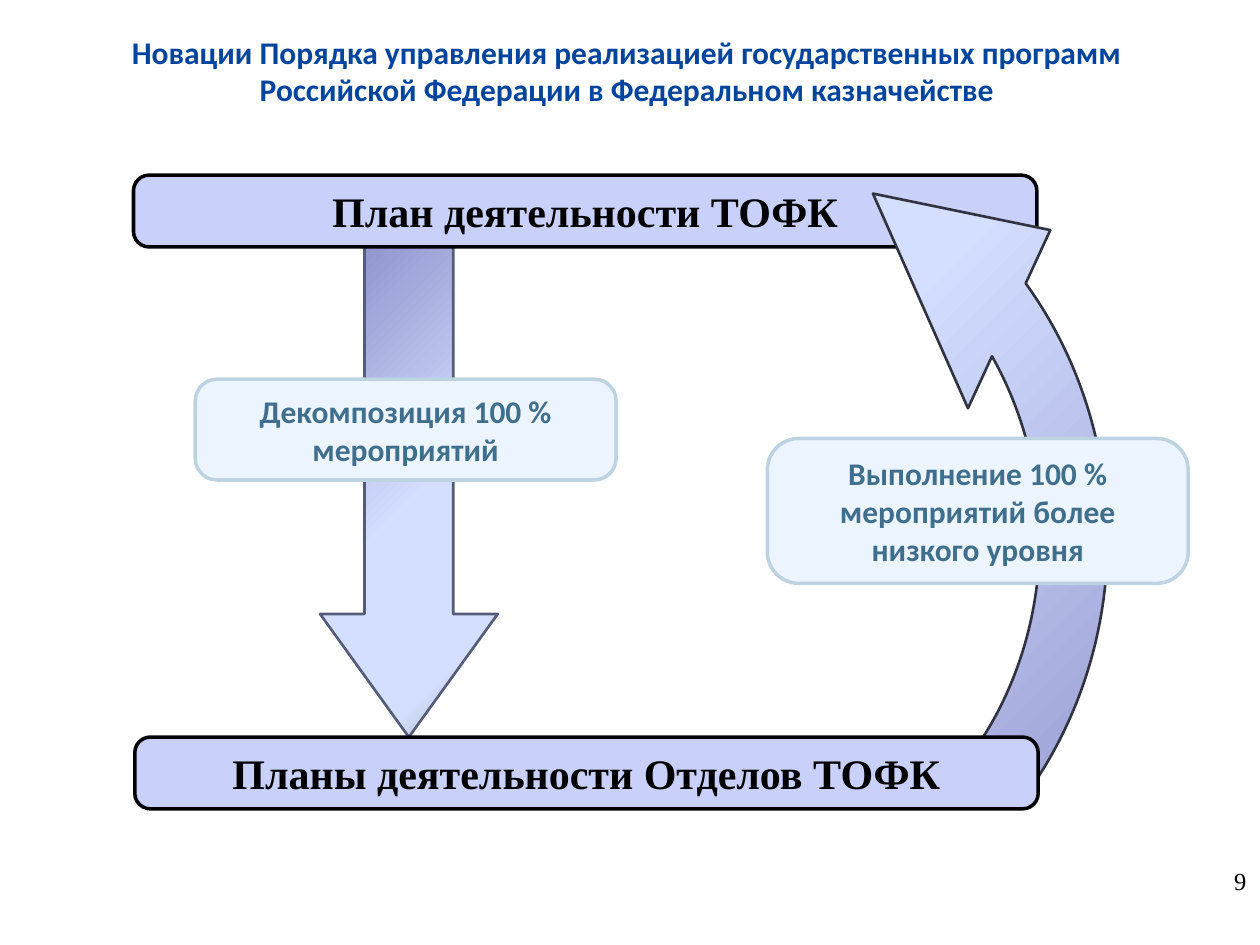
from dataclasses import dataclass

from lxml.etree import SubElement
from pptx import Presentation
from pptx.dml.color import RGBColor
from pptx.enum.shapes import MSO_SHAPE
from pptx.enum.text import MSO_ANCHOR, MSO_AUTO_SIZE, PP_ALIGN
from pptx.oxml.ns import qn
from pptx.util import Inches, Pt

COLUMNS, ROWS = 100, 75
SLIDE_WIDTH, SLIDE_HEIGHT = Inches(10), Inches(7.5)
PLAN_WIDTH, PLAN_HEIGHT = 71.7, 5.7
STEP_WIDTH = 33.4
CORNER = 0.217


@dataclass(frozen=True)
class Area:
    """Place on the slide in grid columns and rows."""
    column: float
    row: float
    columns: float
    rows: float

    def box(self) -> tuple[int, int, int, int]:
        """Return left, top, width and height in EMU."""
        return (int(self.column * SLIDE_WIDTH / COLUMNS), int(self.row * SLIDE_HEIGHT / ROWS),
                int(self.columns * SLIDE_WIDTH / COLUMNS), int(self.rows * SLIDE_HEIGHT / ROWS))


@dataclass(frozen=True)
class Lettering:
    """Typeface, size, colour and weight of a text."""
    font: str
    size: float
    color: str
    bold: bool = True


@dataclass(frozen=True)
class PanelStyle:
    """Fill, outline and lettering of a rounded panel."""
    fill: str
    outline: str
    lettering: Lettering


@dataclass(frozen=True)
class Panel:
    """Rounded panel with its text."""
    area: Area
    text: str
    style: PanelStyle


@dataclass(frozen=True)
class BlockArrow:
    """Gradient arrow between the two plans."""
    preset: MSO_SHAPE
    area: Area
    adjustments: tuple[float, ...]
    end_color: str
    outline: str
    rotation: float = 0
    mirrored: bool = False


PLAN = PanelStyle("C9D1FB", "000000", Lettering("Times New Roman", 24, "000000"))
STEP = PanelStyle("EBF4FF", "BED3E1", Lettering("Calibri", 18, "406F8D"))
TITLE = Lettering("Calibri", 18, "00449E")
PAGE_NUMBER = Lettering("Times New Roman", 14, "000000", False)

DECOMPOSITION_ARROW = BlockArrow(
    MSO_SHAPE.DOWN_ARROW, Area(25.4, 18.6, 14.1, 39.9), (0.5, 0.693), "96AB94", "545C79")
EXECUTION_ARROW = BlockArrow(
    MSO_SHAPE.CIRCULAR_ARROW, Area(18.2, 6.4, 76.8, 72.8),
    (0.074, 17.135, 183.983, 139.159, 0.107), "D9BDA9", "323341", 90, True)

TERRITORIAL_PLAN = Panel(
    Area(10.6, 13.9, PLAN_WIDTH, PLAN_HEIGHT), "План деятельности ТОФК", PLAN)
DEPARTMENT_PLANS = Panel(
    Area(10.7, 58.5, PLAN_WIDTH, PLAN_HEIGHT), "Планы деятельности Отделов ТОФК", PLAN)
DECOMPOSITION = Panel(
    Area(15.5, 30.1, STEP_WIDTH, 8), "Декомпозиция 100 % мероприятий", STEP)
EXECUTION = Panel(
    Area(60.9, 34.8, STEP_WIDTH, 11.5),
    "Выполнение 100 % мероприятий более низкого уровня", STEP)


def rgb(color: str) -> RGBColor:
    """Turn a hex string into a colour."""
    return RGBColor.from_string(color)


def write(shape, text: str, lettering: Lettering, alignment: PP_ALIGN, grow: bool = True) -> None:
    """Put one run of text into a shape."""
    frame = shape.text_frame
    frame.word_wrap = True
    frame.auto_size = MSO_AUTO_SIZE.SHAPE_TO_FIT_TEXT if grow else MSO_AUTO_SIZE.NONE
    paragraph = frame.paragraphs[0]
    paragraph.alignment = alignment
    run = paragraph.add_run()
    run.text = text
    run.font.name = lettering.font
    run.font.size = Pt(lettering.size)
    run.font.bold = lettering.bold
    run.font.color.rgb = rgb(lettering.color)


def outline(shape, color: str, width: float) -> None:
    """Give a shape its border and remove its shadow."""
    shape.shadow.inherit = False
    shape.line.color.rgb = rgb(color)
    shape.line.width = Pt(width)


def shade(shape, end_color: str) -> None:
    """Fill a shape with the diagonal gradient of the arrows."""
    shape.fill.gradient()
    gradient = shape._element.spPr.find(qn("a:gradFill"))
    gradient.set("rotWithShape", "1")
    stops = gradient.find(qn("a:gsLst"))
    for stop in list(stops):
        stops.remove(stop)
    for percent, color in ((0, "8488C4"), (53, "D4DEFF"), (83, "D4DEFF"), (100, end_color)):
        stop = SubElement(stops, qn("a:gs"), pos=str(percent * 1000))
        SubElement(stop, qn("a:srgbClr"), val=color)
    gradient.find(qn("a:lin")).set("ang", str(45 * 60000))


def draw_arrow(slide, arrow: BlockArrow) -> None:
    """Draw a gradient block arrow."""
    shape = slide.shapes.add_shape(arrow.preset, *arrow.area.box())
    for index, value in enumerate(arrow.adjustments):
        shape.adjustments[index] = value
    shape.rotation = arrow.rotation
    if arrow.mirrored:
        shape._element.spPr.find(qn("a:xfrm")).set("flipH", "1")
    shade(shape, arrow.end_color)
    outline(shape, arrow.outline, 1.5)


def draw_panel(slide, panel: Panel) -> None:
    """Draw a rounded panel with centred text."""
    shape = slide.shapes.add_shape(MSO_SHAPE.ROUNDED_RECTANGLE, *panel.area.box())
    shape.adjustments[0] = CORNER
    shape.fill.solid()
    shape.fill.fore_color.rgb = rgb(panel.style.fill)
    outline(shape, panel.style.outline, 2)
    shape.text_frame.vertical_anchor = MSO_ANCHOR.MIDDLE
    write(shape, panel.text, panel.style.lettering, PP_ALIGN.CENTER)


def main() -> None:
    """Build the slide and save it."""
    presentation = Presentation()
    presentation.slide_width, presentation.slide_height = SLIDE_WIDTH, SLIDE_HEIGHT
    slide = presentation.slides.add_slide(presentation.slide_layouts[6])

    draw_arrow(slide, DECOMPOSITION_ARROW)
    draw_panel(slide, TERRITORIAL_PLAN)
    draw_arrow(slide, EXECUTION_ARROW)
    draw_panel(slide, DEPARTMENT_PLANS)
    page_number = slide.shapes.add_textbox(*Area(95.2, 68.2, 4.7, 5.2).box())
    write(page_number, "9", PAGE_NUMBER, PP_ALIGN.RIGHT, grow=False)
    draw_panel(slide, DECOMPOSITION)
    draw_panel(slide, EXECUTION)
    title = slide.shapes.add_textbox(*Area(9.2, 2.1, 81.1, 7.1).box())
    write(title, "Новации Порядка управления реализацией государственных программ "
          "Российской Федерации в Федеральном казначействе", TITLE, PP_ALIGN.CENTER)

    presentation.save("out.pptx")


if __name__ == "__main__":
    main()
